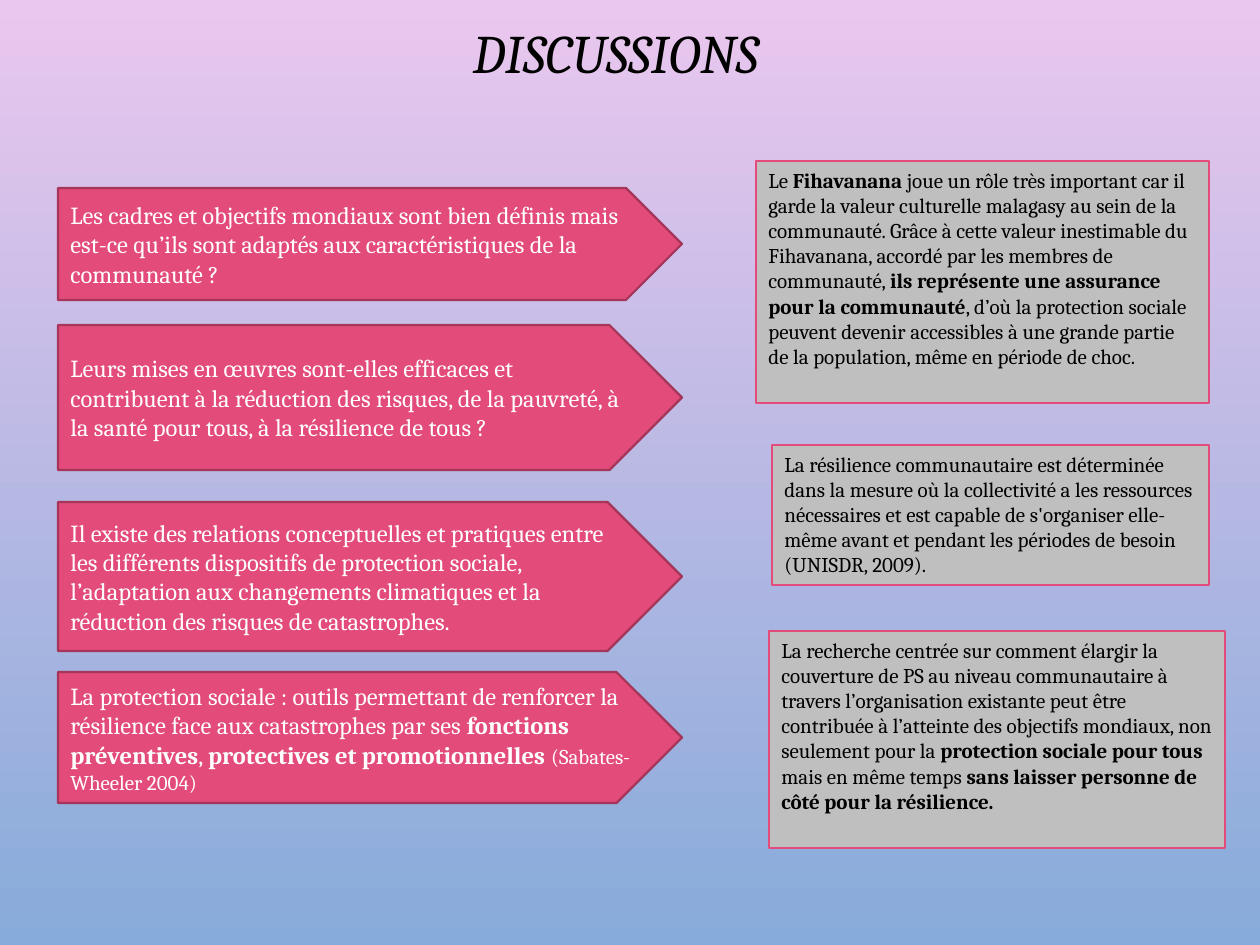
import pptx
import pptx.util
import pptx.dml.color
import pptx.enum.shapes
import pptx.enum.text

PX = 914400 / 126
FONT = "Cambria"
COLORS = {
    "top": "EAC7EE", "bottom": "87ABDA", "arrow": "E34B7A", "edge": "A53659",
    "card": "BFBFBF", "white": "FFFFFF", "black": "000000",
}
SHAPE = pptx.enum.shapes.MSO_SHAPE
ANCHOR = pptx.enum.text.MSO_ANCHOR
ALIGN = pptx.enum.text.PP_ALIGN

QUESTIONS = [
    (188, 112, "Les cadres et objectifs mondiaux sont bien définis mais est-ce qu’ils sont adaptés "
               "aux caractéristiques de la communauté ?", ""),
    (325, 145, "Leurs mises en œuvres sont-elles efficaces et contribuent à la réduction des risques, "
               "de la pauvreté, à la santé pour tous, à la résilience de tous ?", ""),
    (502, 149, "Il existe des relations conceptuelles et pratiques entre les différents dispositifs de "
               "protection sociale, l’adaptation aux changements climatiques et la réduction des risques "
               "de catastrophes.", ""),
    (672, 131, "La protection sociale : outils permettant de renforcer la résilience face aux catastrophes "
               "par ses **fonctions préventives**, **protectives et promotionnelles **",
     "(Sabates-Wheeler 2004)"),
]
ANSWERS = [
    ((756, 161, 453, 242),
     "Le **Fihavanana **joue un rôle très important car il garde la valeur culturelle malagasy au sein "
     "de la communauté. Grâce à cette valeur inestimable du Fihavanana, accordé par les membres de "
     "communauté, **ils représente une assurance pour la communauté**, d’où la protection sociale "
     "peuvent devenir accessibles à une grande partie de la population, même en période de choc."),
    ((772, 445, 437, 140),
     "La résilience communautaire est déterminée dans la mesure où la collectivité a les ressources "
     "nécessaires et est capable de s'organiser elle-même avant et pendant les périodes de besoin "
     "(UNISDR, 2009)."),
    ((769, 631, 456, 217),
     "La recherche centrée sur comment élargir la couverture de PS au niveau communautaire à travers "
     "l’organisation existante peut être contribuée à l’atteinte des objectifs mondiaux, non seulement "
     "pour la **protection sociale pour tous **mais en même temps **sans laisser personne de côté pour "
     "la résilience.**"),
]


def px(n):
    """Turn pixels into EMU."""
    return pptx.util.Emu(round(n * PX))


def rgb(name):
    """Look up a named colour."""
    return pptx.dml.color.RGBColor.from_string(COLORS[name])


def style(p, size, color, align):
    """Set the font and alignment of a paragraph."""
    p.alignment = align
    p.font.name = FONT
    p.font.size = pptx.util.Pt(size)
    p.font.color.rgb = rgb(color)


def add_panel(shapes, kind, box, fill, line, width, text, size, color, anchor):
    """Draw a filled shape with text whose ** pairs mark bold, and return its paragraph."""
    sp = shapes.add_shape(kind, *map(px, box))
    sp.shadow.inherit = False
    sp.fill.solid()
    sp.fill.fore_color.rgb = rgb(fill)
    sp.line.color.rgb = rgb(line)
    sp.line.width = pptx.util.Pt(width)
    tf = sp.text_frame
    tf.word_wrap = True
    tf.vertical_anchor = anchor
    p = tf.paragraphs[0]
    style(p, size, color, ALIGN.LEFT)
    for i, part in enumerate(text.split("**")):
        if part:
            r = p.add_run()
            r.text = part
            if i % 2:
                r.font.bold = True
    return p


def add_background(slide):
    """Fill the slide with a vertical gradient."""
    fill = slide.background.fill
    fill.gradient()
    fill.gradient_angle = 270
    for stop, name in zip(fill.gradient_stops, ("top", "bottom")):
        stop.color.rgb = rgb(name)


def add_title(slide, box, text):
    """Place the slide title in the given box."""
    sp = slide.shapes.title
    sp.left, sp.top, sp.width, sp.height = map(px, box)
    tf = sp.text_frame
    tf.text = text
    tf.vertical_anchor = ANCHOR.MIDDLE
    p = tf.paragraphs[0]
    style(p, 31, "black", ALIGN.CENTER)
    p.font.italic = True
    p.line_spacing = 0.9


def add_questions(slide, left, width):
    """Stack the question arrows in one group."""
    group = slide.shapes.add_group_shape()
    for top, height, text, citation in QUESTIONS:
        p = add_panel(group.shapes, SHAPE.PENTAGON, (left, top, width, height), "arrow", "edge",
                      1.25, text, 14, "white", ANCHOR.MIDDLE)
        if citation:
            r = p.add_run()
            r.text = citation
            r.font.size = pptx.util.Pt(12)


def add_answers(slide):
    """Place the answer cards."""
    for box, text in ANSWERS:
        add_panel(slide.shapes, SHAPE.RECTANGLE, box, "card", "arrow", 1, text, 12, "black", ANCHOR.TOP)


def main():
    """Build and save the presentation."""
    prs = pptx.Presentation()
    prs.slide_width, prs.slide_height = px(1260), px(945)
    slide = prs.slides.add_slide(prs.slide_layouts[5])
    add_background(slide)
    add_title(slide, (68, 0, 1095, 112), "DISCUSSIONS")
    add_questions(slide, 58, 624)
    add_answers(slide)
    prs.save("out.pptx")


if __name__ == "__main__":
    main()
